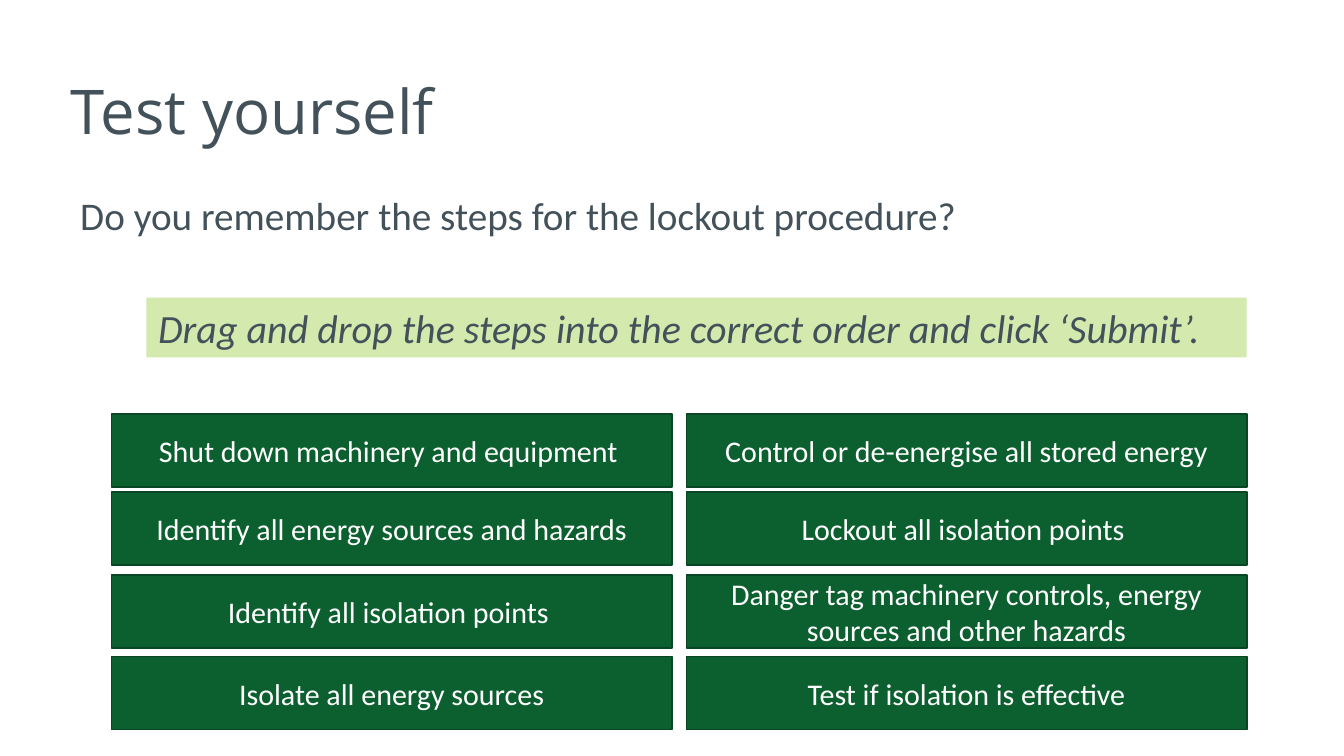
from dataclasses import dataclass

from pptx import Presentation, util as u
from pptx.dml.color import RGBColor
from pptx.enum import shapes, text


@dataclass(frozen=True)
class Theme:
    ink: str = "43525A"
    white: str = "FFFFFF"
    highlight: str = "D3E9AD"
    green: str = "0C6030"
    edge: str = "094724"
    heading_font: str = "Open Sans"
    body_font: str = "Calibri"
    title_size: float = 37
    question_size: float = 23.5
    prompt_size: float = 24
    step_size: float = 18


THEME = Theme()
PAGE_SIZE = 11.2, 6.3
TITLE_BOX = 0.49, 0.34, 9.66, 1.22
QUESTION_BOX = 0.57, 1.59, 10.07, 1.03
PROMPT_BOX = 1.22, 2.48, 9.17, 0.5
STEPS_BOX = 0.93, 3.45, 9.46, 2.63
COLUMN_GAP = 0.12
STEP_HEIGHT = 0.61
ROW_OFFSETS = 0, 0.65, 1.34, 2.02
STEP_COLUMNS = (
    (
        "Shut down machinery and equipment ",
        "Identify all energy sources and hazards",
        "Identify all isolation points ",
        "Isolate all energy sources",
    ),
    (
        "Control or de-energise all stored energy",
        "Lockout all isolation points ",
        "Danger tag machinery controls, energy sources and other hazards",
        "Test if isolation is effective",
    ),
)


def inches(box):
    return [u.Inches(length) for length in box]


def write(shape, words, *, size, font=THEME.body_font, color=THEME.ink, italic=False,
          align=text.PP_ALIGN.LEFT, anchor=text.MSO_ANCHOR.TOP, spacing=1.0, before=0):
    frame = shape.text_frame
    frame.word_wrap = True
    frame.auto_size = text.MSO_AUTO_SIZE.NONE
    frame.vertical_anchor = anchor
    para = frame.paragraphs[0]
    para.alignment = align
    para.line_spacing = spacing
    para.space_before = u.Pt(before)
    span = para.add_run()
    span.text = words
    span.font.name = font
    span.font.size = u.Pt(size)
    span.font.italic = italic
    span.font.color.rgb = RGBColor.from_string(color)


def add_panel(page, box, fill, edge=None):
    panel = page.shapes.add_shape(shapes.MSO_SHAPE.RECTANGLE, *inches(box))
    panel.shadow.inherit = False
    panel.fill.solid()
    panel.fill.fore_color.rgb = RGBColor.from_string(fill)
    if edge:
        panel.line.color.rgb = RGBColor.from_string(edge)
        panel.line.width = u.Pt(1)
    else:
        panel.line.fill.background()
    return panel


def add_title(page, box, words):
    title = page.shapes.title
    title.left, title.top, title.width, title.height = inches(box)
    write(title, words, size=THEME.title_size, font=THEME.heading_font,
          anchor=text.MSO_ANCHOR.MIDDLE, spacing=0.9)


def add_question(page, box, words):
    question = page.shapes.add_textbox(*inches(box))
    write(question, words, size=THEME.question_size, spacing=0.9, before=8.4)


def add_prompt(page, box, words):
    prompt = add_panel(page, box, THEME.highlight)
    write(prompt, words, size=THEME.prompt_size, italic=True)


def add_steps(page, box, columns):
    left, top, width, _ = box
    step_width = (width - COLUMN_GAP * (len(columns) - 1)) / len(columns)
    for column, steps in enumerate(columns):
        step_left = left + column * (step_width + COLUMN_GAP)
        for offset, words in zip(ROW_OFFSETS, steps):
            step_box = step_left, top + offset, step_width, STEP_HEIGHT
            step = add_panel(page, step_box, THEME.green, THEME.edge)
            write(step, words, size=THEME.step_size, color=THEME.white,
                  align=text.PP_ALIGN.CENTER, anchor=text.MSO_ANCHOR.MIDDLE)


def add_quiz_slide(deck):
    page = deck.slides.add_slide(deck.slide_layouts.get_by_name("Title Only"))
    page.background.fill.solid()
    page.background.fill.fore_color.rgb = RGBColor.from_string(THEME.white)
    add_title(page, TITLE_BOX, "Test yourself")
    add_question(page, QUESTION_BOX, "Do you remember the steps for the lockout procedure?")
    add_prompt(page, PROMPT_BOX,
               "Drag and drop the steps into the correct order and click ‘Submit’.")
    add_steps(page, STEPS_BOX, STEP_COLUMNS)


def main():
    deck = Presentation()
    deck.slide_width, deck.slide_height = inches(PAGE_SIZE)
    add_quiz_slide(deck)
    deck.save("out.pptx")


if __name__ == "__main__":
    main()
